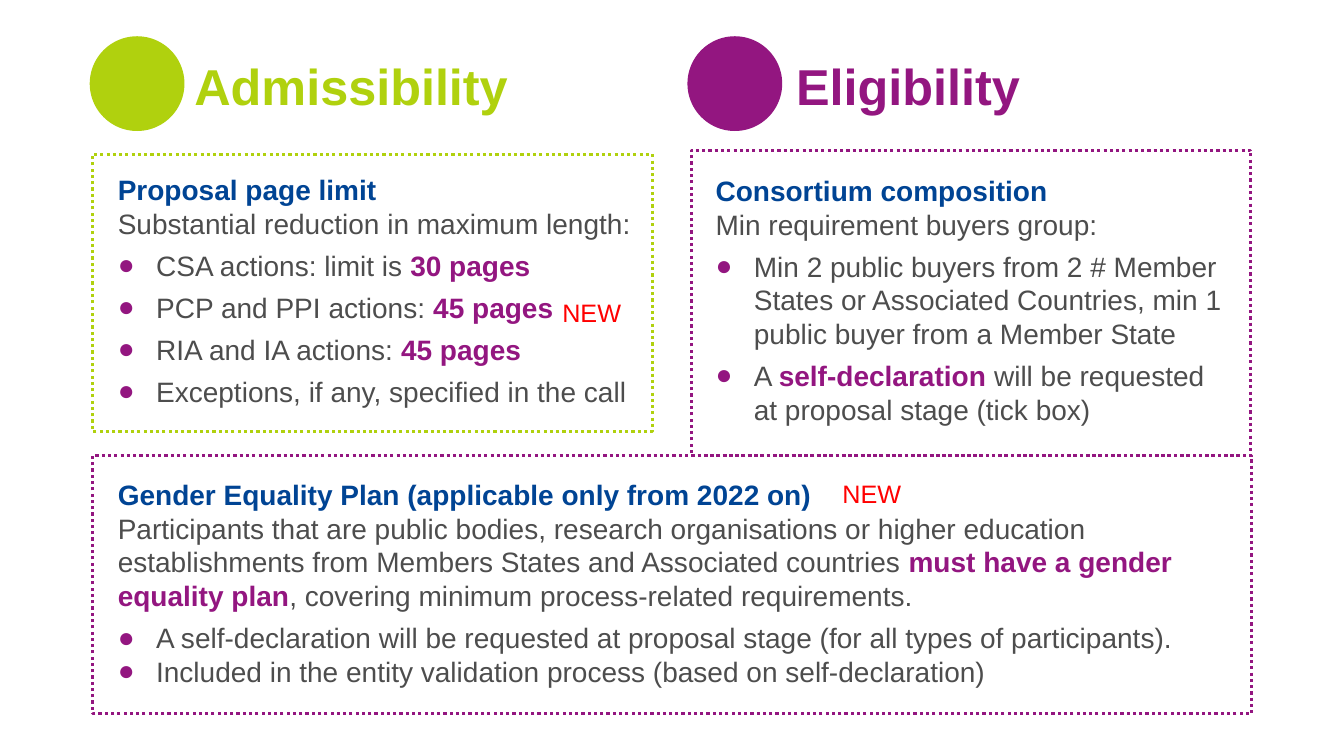
"""Builds a slide on the admissibility and eligibility conditions of a call."""
from dataclasses import dataclass

from lxml import etree
from pptx import Presentation
from pptx.dml.color import RGBColor
from pptx.enum.dml import MSO_LINE
from pptx.enum.shapes import MSO_SHAPE
from pptx.enum.text import MSO_ANCHOR
from pptx.oxml.ns import qn
from pptx.util import Inches, Pt

OVAL = MSO_SHAPE.OVAL
RECTANGLE = MSO_SHAPE.RECTANGLE
DOTTED = MSO_LINE.ROUND_DOT
TOP, BOTTOM = MSO_ANCHOR.TOP, MSO_ANCHOR.BOTTOM

LIME, PURPLE, BLUE, GREY, RED = "B0D10E", "931680", "004494", "4D4D4D", "FF0000"
FONT = "Arial"
COLUMNS, ROWS = 160, 90
BULLET_INDENT = Inches(0.38)
BULLET_GAP = 6

presentation = Presentation()
presentation.slide_width = Inches(13.33)
presentation.slide_height = Inches(7.5)
slide = presentation.slides.add_slide(presentation.slide_layouts[6])


@dataclass(frozen=True)
class Area:
    column: float
    row: float
    columns: float
    rows: float

    def box(self) -> tuple[int, int, int, int]:
        across = presentation.slide_width / COLUMNS
        down = presentation.slide_height / ROWS
        return (round(self.column * across), round(self.row * down),
                round(self.columns * across), round(self.rows * down))


@dataclass(frozen=True)
class Line:
    pieces: tuple[str, ...]
    color: str = GREY
    bold: bool = False
    bullet: bool = False
    gap: int = 0


@dataclass(frozen=True)
class Topic:
    title: str
    color: str
    circle: Area
    heading: Area


@dataclass(frozen=True)
class Panel:
    color: str
    frame: Area
    body: Area
    lines: tuple[Line, ...]


def subtitle(text: str) -> Line:
    return Line((text,), BLUE, bold=True)


def point(*pieces: str, gap: int = BULLET_GAP) -> Line:
    return Line(pieces, bullet=True, gap=gap)


TOPICS = (
    Topic("Admissibility", LIME, Area(10.68, 4.32, 11.28, 11.28), Area(21.96, 6.36, 58, 7.44)),
    Topic("Eligibility", PURPLE, Area(81.84, 4.32, 11.28, 11.28), Area(93.6, 6.36, 30.4, 7.44)),
)

PANELS = (
    Panel(LIME, Area(11.04, 18.36, 66.6, 33), Area(12.84, 19.96, 63.5, 31), (
        subtitle("Proposal page limit"),
        Line(("Substantial reduction in maximum length:",)),
        point("CSA actions: limit is ", "30 pages"),
        point("PCP and PPI actions: ", "45 pages"),
        point("RIA and IA actions: ", "45 pages"),
        point("Exceptions, if any, specified in the call"),
    )),
    Panel(PURPLE, Area(82.32, 17.88, 66.6, 36.36), Area(84, 20.08, 63.5, 31), (
        subtitle("Consortium composition"),
        Line(("Min requirement buyers group:",)),
        point("Min 2 public buyers from 2 # Member States or Associated Countries, "
              "min 1 public buyer from a Member State"),
        point("A ", "self-declaration ", "will be requested at proposal stage (tick box)"),
    )),
    Panel(PURPLE, Area(11.04, 54.24, 138, 30.72), Area(12.84, 56.28, 138, 27), (
        subtitle("Gender Equality Plan (applicable only from 2022 on)"),
        Line(("Participants that are public bodies, research organisations or higher education "
              "establishments from Members States and Associated countries ",
              "must have a gender equality plan",
              ", covering minimum process-related requirements.")),
        point("A self-declaration will be requested at proposal stage "
              "(for all types of participants)."),
        point("Included in the entity validation process (based on self-declaration)", gap=0),
    )),
)

NEW_TAGS = (Area(65.76, 34.8, 9.48, 4.8), Area(99.12, 56.4, 9.48, 4.8))


def rgb(color: str) -> RGBColor:
    return RGBColor.from_string(color)


def style(font, size: float, color: str, bold: bool = False) -> None:
    font.name, font.size, font.bold = FONT, Pt(size), bold
    font.color.rgb = rgb(color)


def add_frame(area: Area, anchor=TOP, bottom: float = 0.05, wrap: bool = True):
    text_frame = slide.shapes.add_textbox(*area.box()).text_frame
    text_frame.word_wrap = wrap
    text_frame.vertical_anchor = anchor
    text_frame.margin_bottom = Inches(bottom)
    return text_frame


def add_bullet(paragraph) -> None:
    properties = paragraph._p.get_or_add_pPr()
    properties.set("marL", str(BULLET_INDENT))
    properties.set("indent", str(-BULLET_INDENT))
    bullet_color = etree.SubElement(properties, qn("a:buClr"))
    etree.SubElement(bullet_color, qn("a:srgbClr")).set("val", PURPLE)
    etree.SubElement(properties, qn("a:buFont")).set("typeface", FONT)
    etree.SubElement(properties, qn("a:buChar")).set("char", "●")


def draw_topic(topic: Topic) -> None:
    circle = slide.shapes.add_shape(OVAL, *topic.circle.box())
    circle.shadow.inherit = False
    circle.fill.solid()
    circle.fill.fore_color.rgb = rgb(topic.color)
    circle.line.fill.background()
    heading = add_frame(topic.heading, BOTTOM, bottom=0)
    heading.text = topic.title
    heading.paragraphs[0].line_spacing = 0.9
    style(heading.paragraphs[0].runs[0].font, 36, topic.color, bold=True)


def draw_panel(panel: Panel) -> None:
    border = slide.shapes.add_shape(RECTANGLE, *panel.frame.box())
    border.shadow.inherit = False
    border.fill.background()
    border.line.color.rgb = rgb(panel.color)
    border.line.width = Pt(2.25)
    border.line.dash_style = DOTTED
    body = add_frame(panel.body)
    for number, line in enumerate(panel.lines):
        paragraph = body.add_paragraph() if number else body.paragraphs[0]
        if line.bullet:
            add_bullet(paragraph)
        paragraph.line_spacing = Pt(24)
        paragraph.space_before = Pt(line.gap)
        for order, piece in enumerate(line.pieces):
            run = paragraph.add_run()
            run.text = piece
            emphasised = order % 2 == 1
            style(run.font, 20, PURPLE if emphasised else line.color, emphasised or line.bold)


def draw_new_tag(area: Area) -> None:
    tag = add_frame(area, wrap=False)
    tag.text = "NEW"
    style(tag.paragraphs[0].runs[0].font, 18, RED)


def main() -> None:
    for topic in TOPICS:
        draw_topic(topic)
    for panel in PANELS:
        draw_panel(panel)
    for area in NEW_TAGS:
        draw_new_tag(area)
    presentation.save("out.pptx")


if __name__ == "__main__":
    main()
